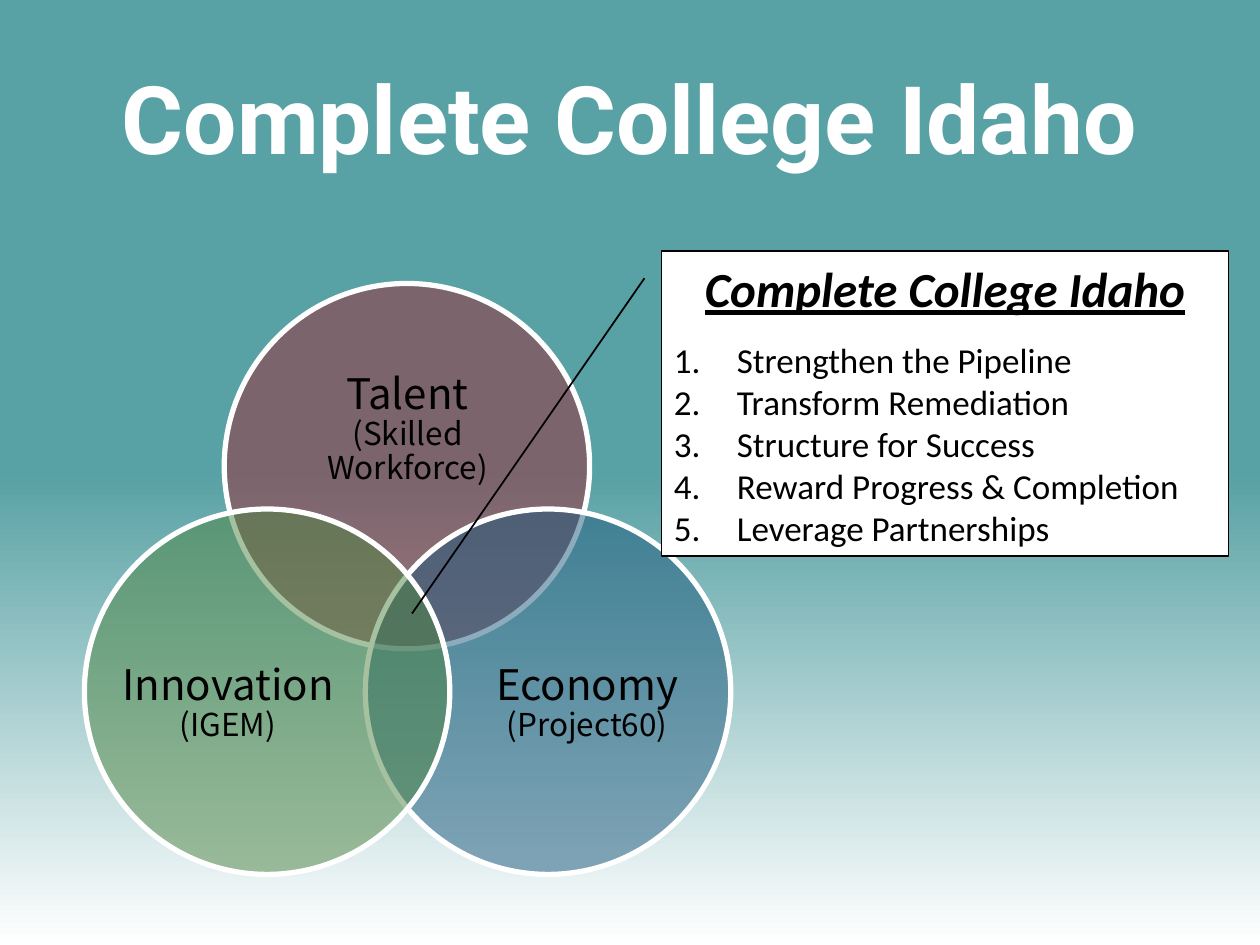
from copy import deepcopy

from lxml.etree import SubElement
from pptx import Presentation
from pptx.dml.color import RGBColor as RGB
from pptx.enum.shapes import MSO_SHAPE as Kind
from pptx.enum.text import MSO_ANCHOR as Anchor, PP_ALIGN as Align
from pptx.oxml.ns import qn
from pptx.util import Emu, Pt

SCALE = 9144
HUES = {
    "white": "FFFFFF", "black": "000000", "teal": "58A1A4",
    "red": "9F2936", "blue": "1B587C", "green": "4E8542",
}
HEAD = {"name": "Roboto", "size": Pt(54), "bold": True}
NAME = {"name": "Noto Sans CJK SC", "size": Pt(24)}
NOTE = {**NAME, "size": Pt(18)}
GOALS = {"name": "Calibri", "size": Pt(28), "bold": True, "italic": True, "underline": True}
STEP = {"name": "Calibri", "size": Pt(20)}


class Deck:
    """Holds the style and the current slide, with a method for each kind of element."""

    def __init__(self, wide, high):
        self.file = Presentation()
        self.file.slide_width, self.file.slide_height = Emu(wide * SCALE), Emu(high * SCALE)
        self.slide = self.file.slides.add_slide(self.file.slide_layouts[6])
        self.shapes = self.slide.shapes

    def hue(self, name):
        return RGB.from_string(HUES[name])

    def fade(self, stops, angle):
        fill = self.slide.background.fill
        fill.gradient()
        fill.gradient_angle = angle
        group = self.slide.element.xpath(".//a:gsLst")[0]
        group.append(deepcopy(group[0]))
        for stop, (place, name) in zip(fill.gradient_stops, stops):
            stop.position = place
            stop.color.rgb = self.hue(name)

    def run(self, para, words, style, color="black"):
        run = para.add_run()
        run.text = words
        run.font.color.rgb = self.hue(color)
        for key, value in style.items():
            setattr(run.font, key, value)

    def text(self, box, lines, color="black", inset=None, spacing=None):
        frame = self.shapes.add_textbox(*(Emu(n * SCALE) for n in box)).text_frame
        frame.word_wrap = True
        frame.vertical_anchor = Anchor.MIDDLE
        if inset is not None:
            for side in ("left", "top", "right", "bottom"):
                setattr(frame, f"margin_{side}", inset)
        para = frame.paragraphs[0]
        para.alignment = Align.CENTER
        para.line_spacing = spacing
        for index, (words, style) in enumerate(lines):
            if index:
                para.add_line_break()
            self.run(para, words, style, color)

    def shape(self, kind, box, fill, line, width, alpha=None):
        shape = self.shapes.add_shape(kind, *(Emu(n * SCALE) for n in box))
        shape.shadow.inherit = False
        shape.fill.solid()
        shape.fill.fore_color.rgb = self.hue(fill)
        shape.line.color.rgb = self.hue(line)
        shape.line.width = Pt(width)
        if alpha:
            tone = shape.element.spPr.find(qn("a:solidFill"))[0]
            SubElement(tone, qn("a:alpha")).set("val", str(alpha * 1000))
        return shape

    def callout(self, box, tail, title, steps):
        shape = self.shape(Kind.LINE_CALLOUT_1, box, "white", "black", 1)
        for index, value in enumerate(tail):
            shape.adjustments[index] = value
        frame = shape.text_frame
        frame.word_wrap = True
        frame.vertical_anchor = Anchor.MIDDLE
        top = frame.paragraphs[0]
        top.alignment = Align.CENTER
        top.space_after = Pt(12)
        self.run(top, title, GOALS)
        for step in steps:
            para = frame.add_paragraph()
            para.alignment = Align.LEFT
            para.level = 1
            props = para._p.get_or_add_pPr()
            props.set("marL", str(50 * SCALE))
            props.set("indent", str(-50 * SCALE))
            SubElement(props, qn("a:buFont")).set("typeface", "+mj-lt")
            SubElement(props, qn("a:buAutoNum")).set("type", "arabicPeriod")
            self.run(para, step, STEP)


def main():
    deck = Deck(1000, 750)
    deck.fade([(0, "white"), (0.5, "teal"), (1, "teal")], 90)
    title = "Complete College Idaho"
    deck.text((50, 30, 900, 125), [(title, HEAD)], "white")
    rings = [
        (178, 225, "red", (217, 276, 213, 130), "Talent", "(Skilled Workforce)"),
        (290, 404, "blue", (379, 479, 174, 159), "Economy", "(Project60)"),
        (67, 404, "green", (94, 479, 174, 159), "Innovation", "(IGEM)"),
    ]
    for left, top, color, box, name, note in rings:
        deck.shape(Kind.OVAL, (left, top, 290, 290), color, "white", 3, 50)
        deck.text(box, [(name, NAME), (note, NOTE)], inset=0, spacing=0.9)
    deck.callout((525, 199, 450, 242), (0.09, -0.03, 1.19, -0.44), title, [
        "Strengthen the Pipeline",
        "Transform Remediation",
        "Structure for Success",
        "Reward Progress & Completion",
        "Leverage Partnerships",
    ])
    deck.file.save("out.pptx")


if __name__ == "__main__":
    main()
